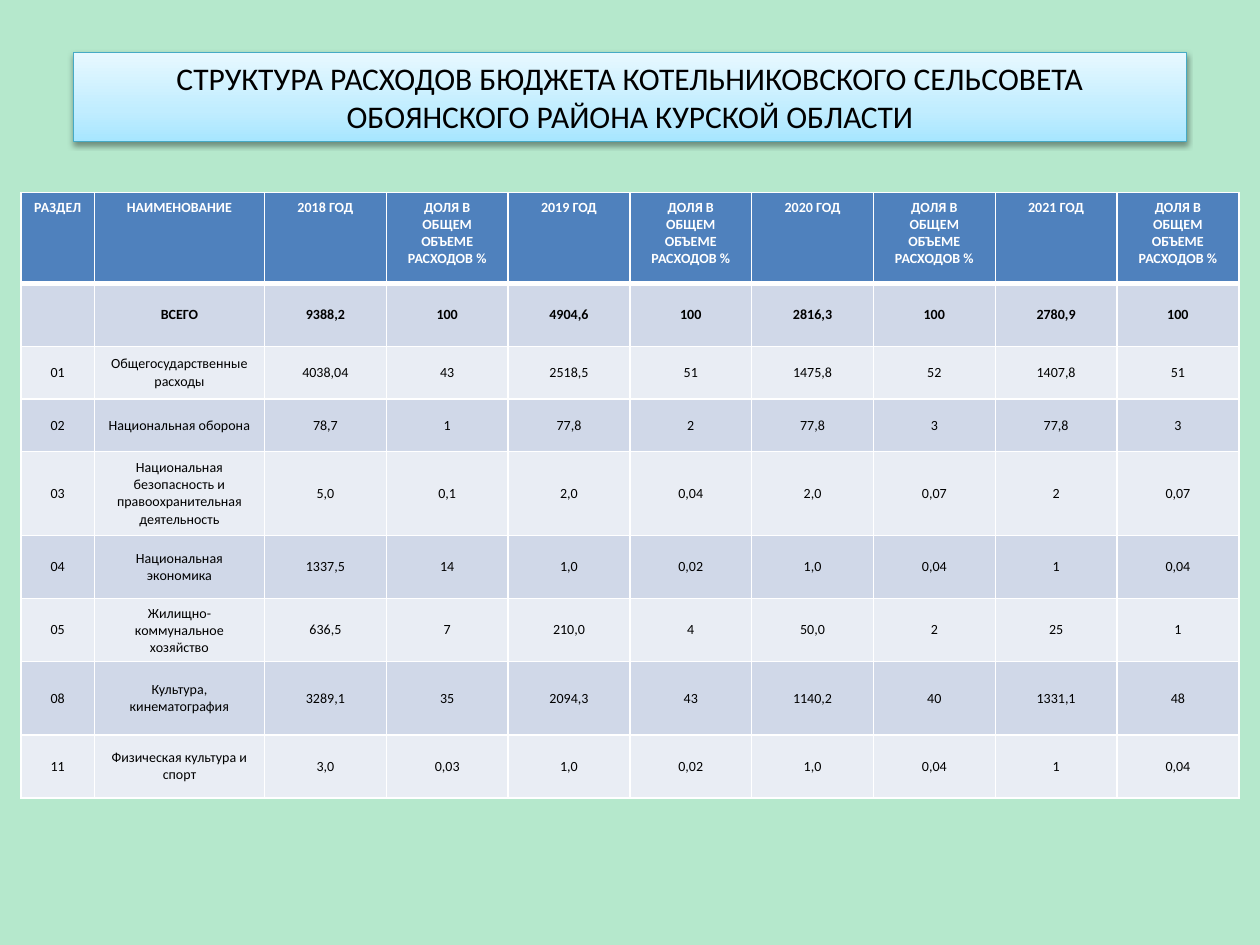
"""Build the slide on the spending structure of a village budget."""
from copy import deepcopy
from dataclasses import dataclass

from lxml import etree
from pptx import Presentation
from pptx import util as u
from pptx.dml import color
from pptx.enum import shapes, text
from pptx.oxml import ns

Pt = u.Pt
HUES = {
    "page": "B5E8CC", "head": "4F81BD", "odd": "D0D8E8", "even": "E9EDF4",
    "white": "FFFFFF", "black": "000000", "edge": "46AAC5",
    "deep": "A7E6FF", "mid": "C1EDFF", "pale": "E7F8FF",
}
FONT = "Calibri"
TITLE = "СТРУКТУРА РАСХОДОВ БЮДЖЕТА КОТЕЛЬНИКОВСКОГО СЕЛЬСОВЕТА ОБОЯНСКОГО РАЙОНА КУРСКОЙ ОБЛАСТИ"
SHARE = "ДОЛЯ В ОБЩЕМ ОБЪЕМЕ РАСХОДОВ %"
YEARS = ("2018", "2019", "2020", "2021")
WIDTHS = [42, 97.2] + [69.6] * 8


@dataclass
class Row:
    """One budget section: its code, name, figures and height."""
    code: str
    name: str
    data: str
    high: float

    def cells(self) -> list[str]:
        """Return the texts of the row from left to right."""
        return [self.code, self.name, *self.data.split()]


@dataclass
class Style:
    """The look of one table row."""
    fill: str
    ink: str
    bold: bool
    anchor: text.MSO_ANCHOR
    top: float
    base: float


ROWS = [
    Row("", "ВСЕГО", "9388,2 100 4904,6 100 2816,3 100 2780,9 100", 36),
    Row("01", "Общегосударственные расходы", "4038,04 43 2518,5 51 1475,8 52 1407,8 51", 30),
    Row("02", "Национальная оборона", "78,7 1 77,8 2 77,8 3 77,8 3", 30),
    Row("03", "Национальная безопасность и правоохранительная деятельность",
        "5,0 0,1 2,0 0,04 2,0 0,07 2 0,07", 48),
    Row("04", "Национальная экономика", "1337,5 14 1,0 0,02 1,0 0,04 1 0,04", 36),
    Row("05", "Жилищно-коммунальное хозяйство", "636,5 7 210,0 4 50,0 2 25 1", 36),
    Row("08", "Культура, кинематография", "3289,1 35 2094,3 43 1140,2 40 1331,1 48", 42),
    Row("11", "Физическая культура и спорт", "3,0 0,03 1,0 0,02 1,0 0,04 1 0,04", 36),
]


def hue(name: str) -> color.RGBColor:
    """Look up a colour by name."""
    return color.RGBColor.from_string(HUES[name])


def node(root, tag: str, **attrs):
    """Append a drawing element and return it."""
    return etree.SubElement(root, ns.qn("a:" + tag), {k: str(v) for k, v in attrs.items()})


def write(frame, words: str, size: float, ink: str, bold: bool = False) -> None:
    """Put centred text into a frame."""
    frame.text = words
    for para in frame.paragraphs:
        para.alignment = text.PP_ALIGN.CENTER
        para.font.size = Pt(size)
        for run in para.runs:
            font = run.font
            font.name, font.size, font.bold = FONT, Pt(size), bold
            font.color.rgb = hue(ink)


def shade(box) -> None:
    """Give a shape a soft shadow below it."""
    box.shadow.inherit = False
    glow = box.element.spPr.find(ns.qn("a:effectLst"))
    cast = node(glow, "outerShdw", blurRad=Pt(3.1), dist=Pt(1.6), dir=5400000, rotWithShape=0)
    node(node(cast, "srgbClr", val=HUES["black"]), "alpha", val=38000)


def blend(box) -> None:
    """Fill a shape with three colours, pale at the top."""
    box.fill.gradient()
    box.fill.gradient_angle = 90
    first = box.element.spPr.find(".//" + ns.qn("a:gs"))
    first.addnext(deepcopy(first))
    steps = [(0, "deep"), (0.35, "mid"), (1, "pale")]
    for stop, (place, name) in zip(box.fill.gradient_stops, steps):
        stop.position = place
        stop.color.rgb = hue(name)


def banner(slide) -> None:
    """Draw the title box."""
    box = slide.shapes.add_shape(shapes.MSO_SHAPE.RECTANGLE, Pt(42), Pt(30), Pt(636), Pt(51))
    blend(box)
    box.line.color.rgb = hue("edge")
    box.line.width = Pt(0.75)
    shade(box)
    frame = box.text_frame
    frame.word_wrap = True
    frame.auto_size = text.MSO_AUTO_SIZE.SHAPE_TO_FIT_TEXT
    write(frame, TITLE, 18, "black")


def border(cell, top: float, base: float) -> None:
    """Draw white lines on the four sides of a cell."""
    props = cell._tc.get_or_add_tcPr()
    sides = [("lnL", 1), ("lnR", 1), ("lnT", top), ("lnB", base)]
    for spot, (tag, wide) in enumerate(sides):
        line = node(props, tag, w=Pt(wide))
        node(node(line, "solidFill"), "srgbClr", val=HUES["white"])
        props.insert(spot, line)


def paint(cells, words: list[str], style: Style) -> None:
    """Fill one table row with text and style."""
    for cell, word in zip(cells, words):
        write(cell.text_frame, word, 8, style.ink, style.bold)
        cell.vertical_anchor = style.anchor
        cell.fill.solid()
        cell.fill.fore_color.rgb = hue(style.fill)
        border(cell, style.top, style.base)


def grid(slide) -> None:
    """Draw the budget table."""
    highs = [52] + [row.high for row in ROWS]
    frame = slide.shapes.add_table(
        len(highs), len(WIDTHS), Pt(12), Pt(110), Pt(sum(WIDTHS)), Pt(sum(highs)))
    table = frame.table
    for col, wide in zip(table.columns, WIDTHS):
        col.width = Pt(wide)
    for row, high in zip(table.rows, highs):
        row.height = Pt(high)
    heads = ["РАЗДЕЛ", "НАИМЕНОВАНИЕ"]
    for year in YEARS:
        heads += [f"{year} ГОД", SHARE]
    top, mid = text.MSO_ANCHOR.TOP, text.MSO_ANCHOR.MIDDLE
    paint(table.rows[0].cells, heads, Style("head", "white", True, top, 1, 3))
    for num, row in enumerate(ROWS, 1):
        total = num == 1
        band = "odd" if num % 2 else "even"
        style = Style(band, "black", total, mid, 3 if total else 1, 1)
        paint(table.rows[num].cells, row.cells(), style)


def main() -> None:
    """Build and save the deck."""
    deck = Presentation()
    deck.slide_width, deck.slide_height = Pt(720), Pt(540)
    slide = deck.slides.add_slide(deck.slide_layouts[6])
    back = slide.background.fill
    back.solid()
    back.fore_color.rgb = hue("page")
    banner(slide)
    grid(slide)
    deck.save("out.pptx")


if __name__ == "__main__":
    main()
